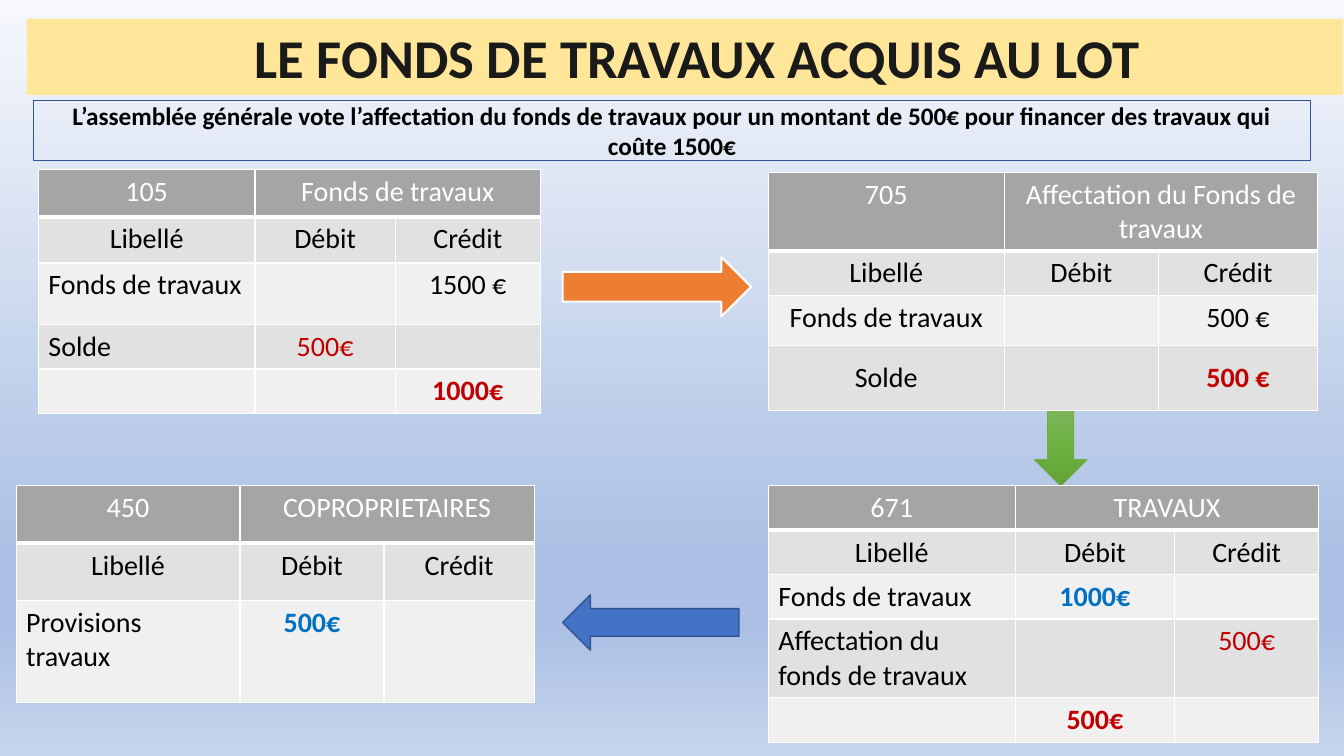
from lxml import etree
from pptx import Presentation
from pptx import util as u
from pptx.dml.color import RGBColor
from pptx.enum import shapes, text
from pptx.oxml.ns import qn

PX = 9144  # 100 px to the inch
FONT = "Calibri"
COLOURS = {
    "white": "FFFFFF", "black": "000000", "title": "1A1A1A",
    "banner": "FFE699", "banner_edge": "F2F2F2", "navy": "325491",
    "header": "A5A5A5", "dark_band": "E1E1E1", "light_band": "F0F0F0",
    "red": "C00000", "debit_blue": "0070C0",
    "orange": "ED7D31", "blue": "4472C4", "green": "70AD47",
}
SKY = [(0, "F6F8FC"), (74, "ABC0E4"), (83, "ABC0E4"), (100, "C7D5ED")]
LEAF = [(0, "81B861"), (50, "6FB242"), (100, "62A336")]

# Cell styles: colour, bold, centred
STYLES = {
    "heading": ("white", False, True),
    "centre": ("black", False, True),
    "left": ("black", False, False),
    "red": ("red", False, True),
    "red_bold": ("red", True, True),
    "blue_bold": ("debit_blue", True, True),
}
EMPTY = ("", "centre")


def px(length):
    return u.Emu(length * PX)


def rgb(name):
    return RGBColor.from_string(COLOURS[name])


def fill_gradient(owner, fill, stops):
    """Give the fill of owner a gradient running from top to bottom."""
    fill.gradient()
    fill.gradient_angle = 270
    stop_list = owner.element.find(".//" + qn("a:gsLst"))
    for old_stop in list(stop_list):
        stop_list.remove(old_stop)
    for percent, colour in stops:
        stop = etree.SubElement(stop_list, qn("a:gs"), pos=str(percent * 1000))
        etree.SubElement(stop, qn("a:srgbClr"), val=colour)


def add_run(paragraph, words, size, colour, bold, centred=True):
    paragraph.alignment = text.PP_ALIGN.CENTER if centred else text.PP_ALIGN.LEFT
    run = paragraph.add_run()
    run.text = words
    run.font.name = FONT
    run.font.size = u.Pt(size)
    run.font.bold = bold
    run.font.color.rgb = rgb(colour)


def add_block(slide, kind, box, fill, edge, edge_width):
    block = slide.shapes.add_shape(kind, *map(px, box))
    block.shadow.inherit = False
    if fill is None:
        block.fill.background()
    else:
        block.fill.solid()
        block.fill.fore_color.rgb = rgb(fill)
    block.line.color.rgb = rgb(edge)
    block.line.width = u.Pt(edge_width)
    return block


def write_block(block, words, size, colour):
    frame = block.text_frame
    frame.word_wrap = True
    frame.vertical_anchor = text.MSO_ANCHOR.MIDDLE
    add_run(frame.paragraphs[0], words, size, colour, True)


def add_borders(cell, bottom_width):
    properties = cell._tc.get_or_add_tcPr()
    for index, side in enumerate("LRTB"):
        width = bottom_width if side == "B" else 1
        line = etree.Element(qn("a:ln" + side), w=str(u.Pt(width)))
        solid = etree.SubElement(line, qn("a:solidFill"))
        etree.SubElement(solid, qn("a:srgbClr"), val=COLOURS["white"])
        properties.insert(index, line)


def add_account(slide, left, top, widths, heights, number, name, entries):
    """Draw a ledger account: heading, column titles, then its entries."""
    rows = [
        [(number, "heading"), (name, "heading"), EMPTY],
        [("Libellé", "centre"), ("Débit", "centre"), ("Crédit", "centre")],
        *entries,
    ]
    account = slide.shapes.add_table(
        len(rows), len(widths), px(left), px(top), px(sum(widths)), px(sum(heights))
    ).table
    for column, width in zip(account.columns, widths):
        column.width = px(width)
    for r, (cells, height) in enumerate(zip(rows, heights)):
        account.rows[r].height = px(height)
        band = "header" if r == 0 else ("dark_band" if r % 2 else "light_band")
        for c, (words, style) in enumerate(cells):
            cell = account.cell(r, c)
            cell.fill.solid()
            cell.fill.fore_color.rgb = rgb(band)
            add_borders(cell, 3 if r == 0 else 1)
            if words:
                colour, bold, centred = STYLES[style]
                add_run(cell.text_frame.paragraphs[0], words, 20, colour, bold, centred)
    account.cell(0, 1).merge(account.cell(0, 2))
    return account


def main():
    deck = Presentation()
    deck.slide_width, deck.slide_height = px(1333), px(750)
    slide = deck.slides.add_slide(deck.slide_layouts[6])
    fill_gradient(slide, slide.background.fill, SKY)
    kinds = shapes.MSO_SHAPE

    to_works = add_block(slide, kinds.DOWN_ARROW, (1026, 397, 52, 85), "green", "green", 0.5)
    fill_gradient(to_works, to_works.fill, LEAF)

    title = add_block(slide, kinds.RECTANGLE, (26, 18, 1307, 77), "banner", "banner_edge", 0.75)
    write_block(title, "LE FONDS DE TRAVAUX ACQUIS AU LOT", 39, "title")
    title.text_frame.margin_left = px(34)

    decision = add_block(slide, kinds.RECTANGLE, (33, 100, 1267, 59), None, "navy", 1)
    write_block(
        decision,
        "L’assemblée générale vote l’affectation du fonds de travaux pour un montant "
        "de 500€ pour financer des travaux qui coûte 1500€",
        18, "black",
    )

    add_account(slide, 38, 168, (215, 139, 144), (47, 46, 61, 39, 39), "105", "Fonds de travaux", [
        [("Fonds de travaux", "left"), EMPTY, ("1500 €", "centre")],
        [("Solde", "left"), ("500€", "red"), EMPTY],
        [EMPTY, EMPTY, ("1000€", "red_bold")],
    ])
    allocation = add_account(
        slide, 762, 171, (234, 153, 158), (68, 39, 50, 64),
        "705", "Affectation du Fonds de travaux", [
            [("Fonds de travaux", "centre"), EMPTY, ("500 €", "centre")],
            [("Solde", "centre"), EMPTY, ("500 €", "red_bold")],
        ])
    for column in range(3):
        allocation.cell(3, column).vertical_anchor = text.MSO_ANCHOR.MIDDLE
    add_account(slide, 762, 482, (245, 158, 143), (40, 40, 30, 71, 41), "671", "TRAVAUX", [
        [("Fonds de travaux", "left"), ("1000€", "blue_bold"), EMPTY],
        [("Affectation du fonds de travaux", "left"), EMPTY, ("500€", "red")],
        [EMPTY, ("500€", "red_bold"), EMPTY],
    ])
    add_account(slide, 16, 482, (222, 143, 149), (57, 57, 101), "450", "COPROPRIETAIRES", [
        [("Provisions travaux", "left"), ("500€", "blue_bold"), EMPTY],
    ])

    add_block(slide, kinds.RIGHT_ARROW, (558, 255, 187, 59), "orange", "white", 1.5)
    add_block(slide, kinds.LEFT_ARROW, (558, 590, 175, 55), "blue", "navy", 1)

    deck.save("out.pptx")


if __name__ == "__main__":
    main()
